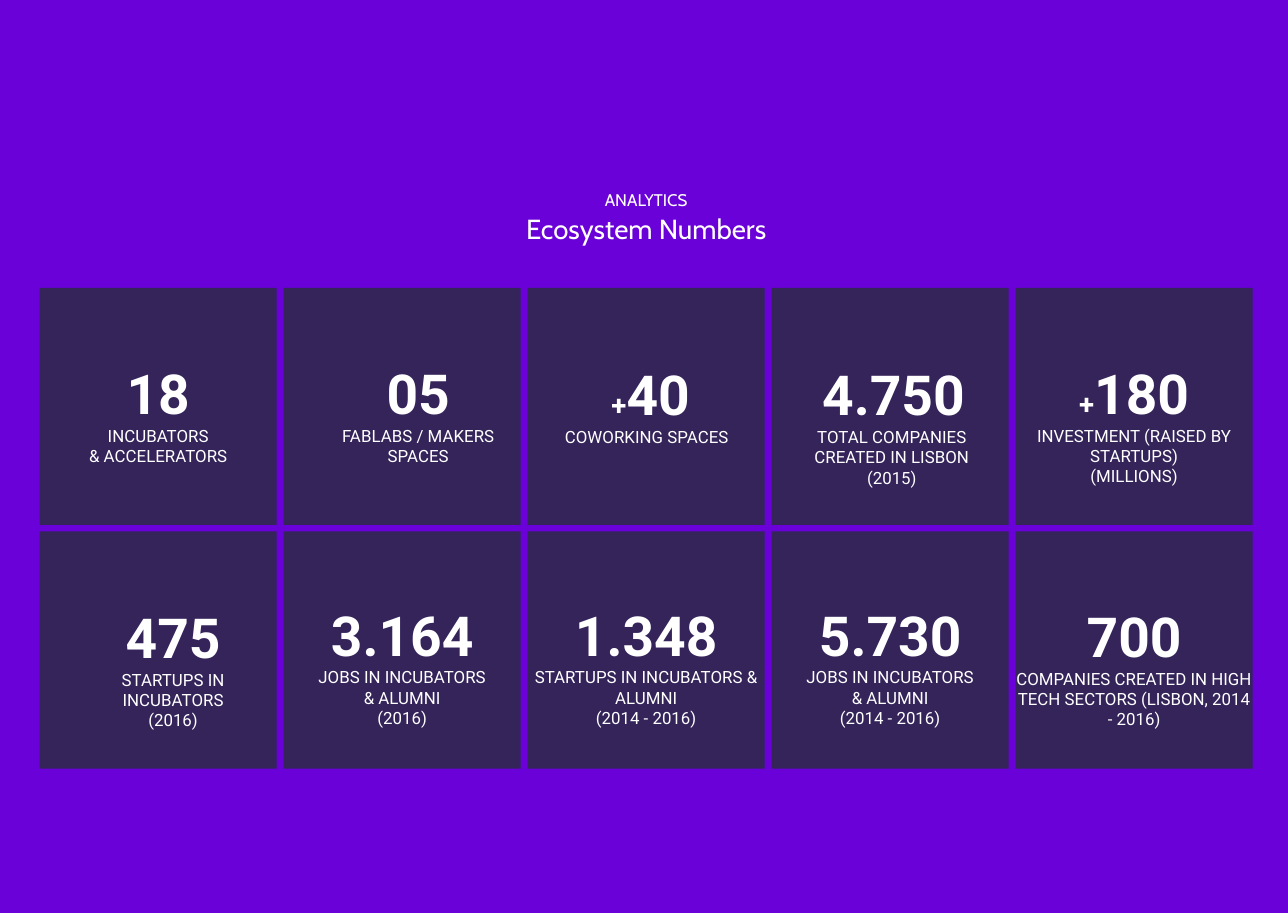
from dataclasses import dataclass

from pptx import Presentation
from pptx.dml.color import RGBColor
from pptx.enum.shapes import MSO_SHAPE as Preset
from pptx.enum.text import MSO_ANCHOR as Anchor, MSO_AUTO_SIZE as AutoSize, PP_ALIGN as Align
from pptx.util import Inches, Pt

PURPLE, INDIGO, WHITE = "6A01D9", "34245A", "FFFFFF"
COLUMNS, ROWS = 5, 2
GRID_LEFT, GRID_TOP, GRID_WIDTH, GRID_HEIGHT = 0.36, 2.61, 11, 4.36
CARD_SIDE = 2.15
TEXT_HEIGHT = 1.1


@dataclass(frozen=True)
class Card:
    """One figure; drop is the text's distance below the card's top, in inches."""
    number: str
    label: str
    drop: float = 0.65
    prefix: str = ""
    number_indent: float = 0
    label_indent: float = 0


CARDS = [
    Card("18", "INCUBATORS\n& ACCELERATORS"),
    Card("05", "FABLABS / MAKERS SPACES", number_indent=0.29, label_indent=0.29),
    Card("40", "COWORKING SPACES", 0.66, "+", number_indent=0.08, label_indent=0.01),
    Card("4.750", "TOTAL COMPANIES\nCREATED IN LISBON\n(2015)", 0.66,
         number_indent=0.06, label_indent=0.03),
    Card("180", "INVESTMENT (RAISED BY STARTUPS)\n(MILLIONS)", prefix="+"),
    Card("475", "STARTUPS IN INCUBATORS\n(2016)", number_indent=0.27, label_indent=0.27),
    Card("3.164", "JOBS IN INCUBATORS\n& ALUMNI\n(2016)", 0.63),
    Card("1.348", "STARTUPS IN INCUBATORS & ALUMNI\n(2014 - 2016)", 0.63),
    Card("5.730", "JOBS IN INCUBATORS\n& ALUMNI\n(2014 - 2016)", 0.63),
    Card("700", "COMPANIES CREATED IN HIGH TECH SECTORS (LISBON, 2014 - 2016)", 0.64),
]


def paint(fill, color: str) -> None:
    fill.solid()
    fill.fore_color.rgb = RGBColor.from_string(color)


def style_run(run, size: float, face: str, bold: bool = False) -> None:
    run.font.size = Pt(size)
    run.font.name = face
    run.font.bold = bold
    run.font.color.rgb = RGBColor.from_string(WHITE)


def prepare_frame(frame) -> None:
    """Wrap the text from the top of its box, without insets."""
    frame.word_wrap = True
    frame.auto_size = AutoSize.NONE
    frame.vertical_anchor = Anchor.TOP
    frame.margin_left = frame.margin_right = frame.margin_top = frame.margin_bottom = 0


def center(para, indent: float = 0) -> None:
    para.alignment = Align.CENTER
    if indent:
        para._p.get_or_add_pPr().set("marL", str(Inches(indent)))


def add_heading(slide) -> None:
    title = slide.shapes.title
    title.left, title.top = Inches(4.65), Inches(1.72)
    title.width, title.height = Inches(2.42), Inches(0.51)
    prepare_frame(title.text_frame)
    title.text_frame.text = "ANALYTICS\nEcosystem Numbers"
    for para, size in zip(title.text_frame.paragraphs, (11, 18)):
        center(para)
        style_run(para.runs[0], size, "Cabin")
    title.text_frame.paragraphs[1].space_before = Pt(1.4)


def add_card(slide, card: Card, left: float, top: float) -> None:
    tile = slide.shapes.add_shape(Preset.RECTANGLE, Inches(left), Inches(top),
                                  Inches(CARD_SIDE), Inches(CARD_SIDE))
    tile.shadow.inherit = False
    paint(tile.fill, INDIGO)
    tile.line.fill.background()

    box = slide.shapes.add_textbox(Inches(left), Inches(top + card.drop),
                                   Inches(CARD_SIDE), Inches(TEXT_HEIGHT))
    frame = box.text_frame
    prepare_frame(frame)
    frame.text = f"{card.prefix or card.number}\n{card.label}"
    number, *labels = frame.paragraphs
    center(number, card.number_indent)
    if card.prefix:
        style_run(number.runs[0], 18, "Roboto", bold=True)
        number.add_run().text = card.number
    style_run(number.runs[-1], 36, "Roboto", bold=True)
    for para in labels:
        center(para, card.label_indent)
        style_run(para.runs[0], 11, "Roboto")


def main() -> None:
    deck = Presentation()
    deck.slide_width, deck.slide_height = Inches(11.68), Inches(8.28)
    slide = deck.slides.add_slide(deck.slide_layouts.get_by_name("Title Only"))
    paint(slide.background.fill, PURPLE)
    add_heading(slide)
    column_step = (GRID_WIDTH - CARD_SIDE) / (COLUMNS - 1)
    row_step = (GRID_HEIGHT - CARD_SIDE) / (ROWS - 1)
    for index, card in enumerate(CARDS):
        row, column = divmod(index, COLUMNS)
        add_card(slide, card, GRID_LEFT + column * column_step, GRID_TOP + row * row_step)
    deck.save("out.pptx")


if __name__ == "__main__":
    main()
